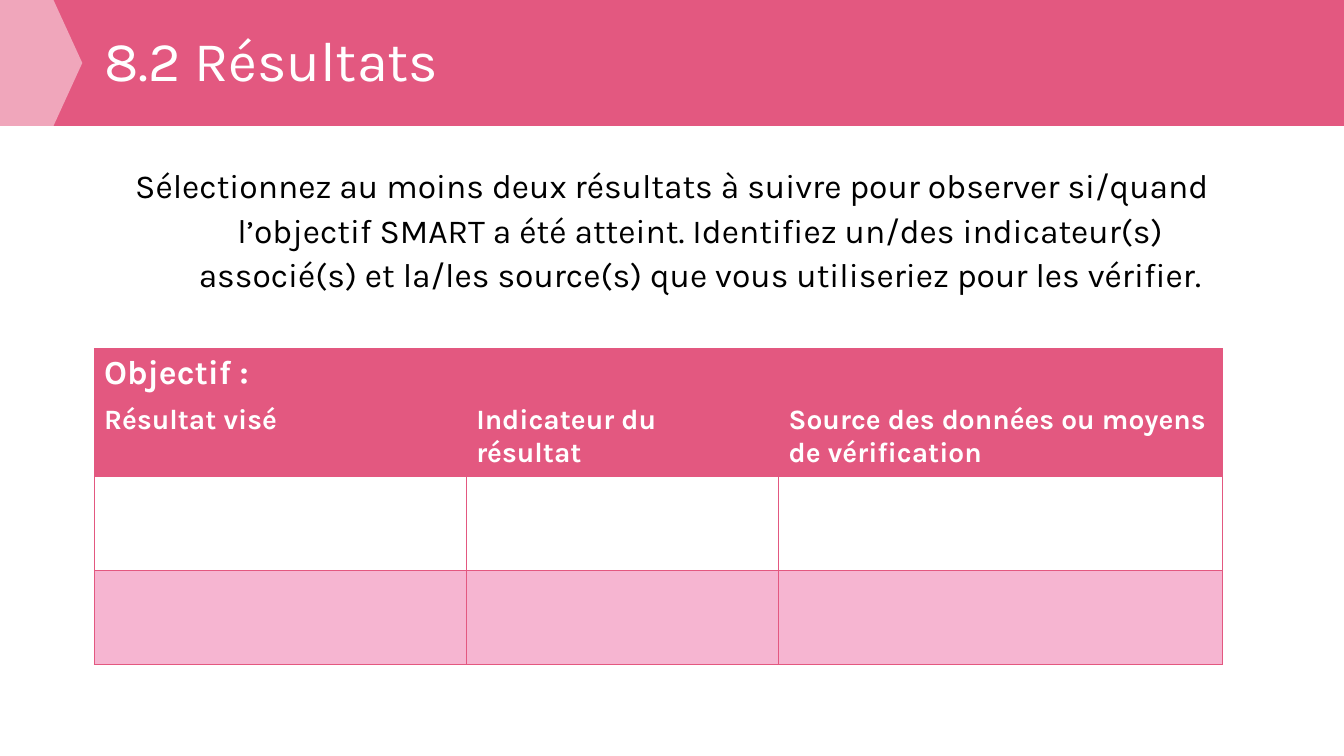
from dataclasses import dataclass

from lxml.etree import SubElement
from pptx import Presentation
from pptx.dml.color import RGBColor
from pptx.enum.shapes import MSO_SHAPE
from pptx.enum.text import MSO_ANCHOR, PP_ALIGN
from pptx.oxml.ns import qn
from pptx.util import Inches, Pt

GRID_COLUMNS = 16


@dataclass(frozen=True)
class Theme:
    font: str = "Karla"
    accent: str = "E35880"
    band: str = "F6B5D1"
    light: str = "FFFFFF"
    dark: str = "000000"
    title_size: int = 40
    body_size: int = 24
    header_size: int = 20
    border_width: float = 0.5


class SlideBuilder:
    def __init__(self, presentation, theme):
        self.theme = theme
        self.unit = presentation.slide_width / GRID_COLUMNS
        self.slide = presentation.slides.add_slide(presentation.slide_layouts[6])

    def length(self, cells):
        return round(cells * self.unit)

    def box(self, *cells):
        return [self.length(value) for value in cells]

    def paint(self, fill, color):
        fill.solid()
        fill.fore_color.rgb = RGBColor.from_string(color)

    def format_runs(self, paragraph, size, color, bold=False):
        for run in paragraph.runs:
            run.font.name = self.theme.font
            run.font.size = Pt(size)
            run.font.bold = bold
            run.font.color.rgb = RGBColor.from_string(color)

    def add_block(self, preset, place, color, opacity=None, adjustment=None):
        shape = self.slide.shapes.add_shape(preset, *self.box(*place))
        shape.shadow.inherit = False
        shape.line.fill.background()
        self.paint(shape.fill, color)
        if adjustment is not None:
            shape.adjustments[0] = adjustment
        if opacity is not None:
            color_element = shape.fill._xPr.find(qn("a:solidFill"))[0]
            SubElement(color_element, qn("a:alpha"), val=str(opacity * 1000))

    def add_text(self, text, place, size, color, line_spacing, anchor=MSO_ANCHOR.TOP):
        text_frame = self.slide.shapes.add_textbox(*self.box(*place)).text_frame
        text_frame.word_wrap = True
        text_frame.vertical_anchor = anchor
        text_frame.text = text
        paragraph = text_frame.paragraphs[0]
        paragraph.line_spacing = line_spacing
        self.format_runs(paragraph, size, color)
        return paragraph

    def hang(self, paragraph, indent):
        properties = paragraph._p.get_or_add_pPr()
        properties.set("marL", str(self.length(indent)))
        properties.set("indent", str(-self.length(indent)))

    def add_borders(self, cell):
        properties = cell._tc.get_or_add_tcPr()
        for position, side in enumerate(("lnL", "lnR", "lnT", "lnB")):
            line = SubElement(properties, qn(f"a:{side}"), w=str(Pt(self.theme.border_width)))
            fill = SubElement(line, qn("a:solidFill"))
            SubElement(fill, qn("a:srgbClr"), val=self.theme.accent)
            properties.insert(position, line)

    def add_results_table(self, left, top, widths, heights, rows, fills, sizes):
        place = self.box(left, top, sum(widths), sum(heights))
        table = self.slide.shapes.add_table(len(rows), len(widths), *place).table
        for column, width in zip(table.columns, widths):
            column.width = self.length(width)
        for row, height in zip(table.rows, heights):
            row.height = self.length(height)
        for row, texts, color, size in zip(table.rows, rows, fills, sizes):
            for cell, text in zip(row.cells, texts):
                self.paint(cell.fill, color)
                self.add_borders(cell)
                if text:
                    cell.text_frame.text = text
                    paragraph = cell.text_frame.paragraphs[0]
                    self.format_runs(paragraph, size, self.theme.light, bold=True)
        table.cell(0, 0).merge(table.cell(0, len(widths) - 1))


def main():
    presentation = Presentation()
    presentation.slide_width = Inches(13.33)
    presentation.slide_height = Inches(7.5)
    theme = Theme()
    builder = SlideBuilder(presentation, theme)

    builder.add_block(MSO_SHAPE.RECTANGLE, (0, 0, GRID_COLUMNS, 1.5), theme.accent)
    builder.add_block(MSO_SHAPE.PENTAGON, (0, 0, 0.98, 1.5), theme.light,
                      opacity=47, adjustment=0.35)
    instruction = builder.add_text(
        "Sélectionnez au moins deux résultats à suivre pour observer si/quand "
        "l’objectif SMART a été atteint. Identifiez un/des indicateur(s) associé(s) "
        "et la/les source(s) que vous utiliseriez pour les vérifier.",
        (1.1, 1.86, 13.8, 6.2), theme.body_size, theme.dark, 1.1)
    instruction.alignment = PP_ALIGN.CENTER
    builder.hang(instruction, 0.67)
    builder.add_text("8.2 Résultats", (1.12, 0.24, 12.7, 1.03),
                     theme.title_size, theme.light, 0.9, MSO_ANCHOR.MIDDLE)

    empty_row = ("", "", "")
    builder.add_results_table(
        left=1.12, top=4.15,
        widths=(4.43, 3.72, 5.28),
        heights=(0.59, 0.9, 1.12, 1.12),
        rows=(
            ("Objectif :", "", ""),
            ("Résultat visé", "Indicateur du résultat",
             "Source des données ou moyens de vérification"),
            empty_row,
            empty_row,
        ),
        fills=(theme.accent, theme.accent, theme.light, theme.band),
        sizes=(theme.body_size,) + (theme.header_size,) * 3)

    presentation.save("out.pptx")


if __name__ == "__main__":
    main()
